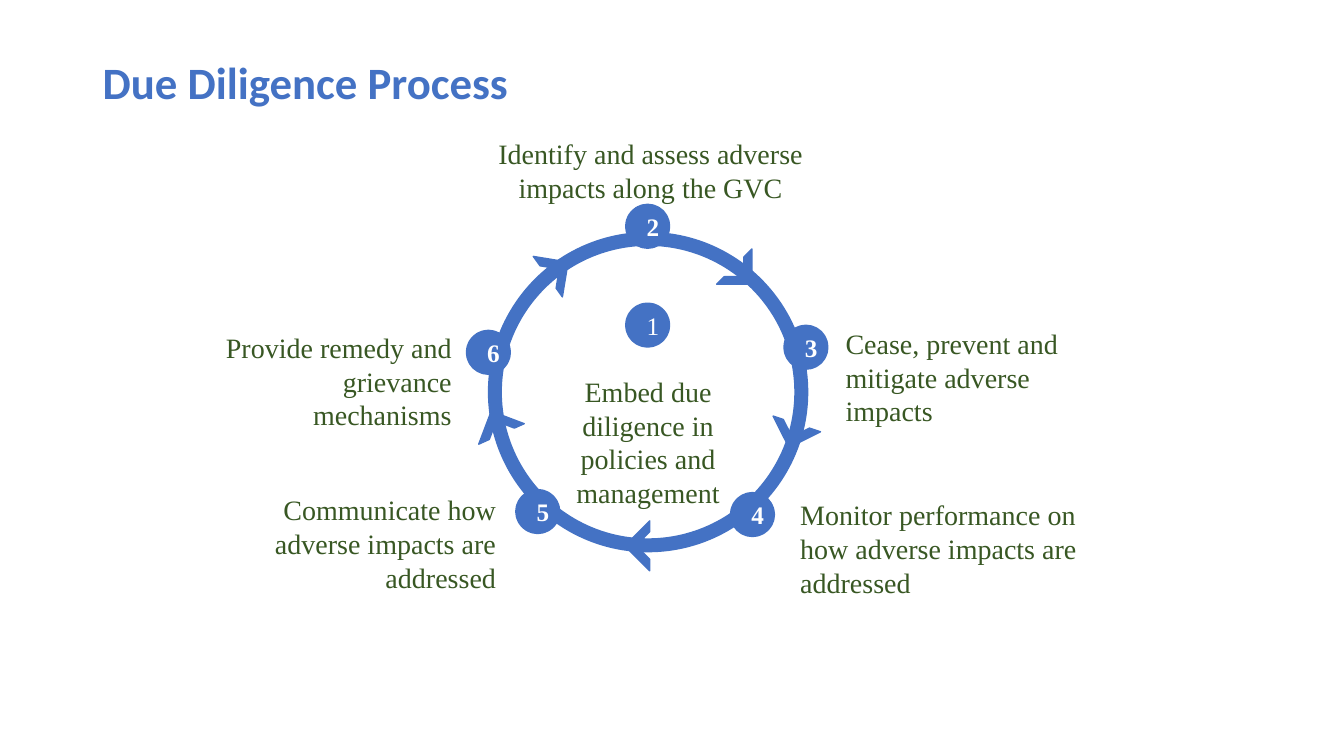
from pptx import Presentation
from pptx.dml.color import RGBColor
from pptx.enum.shapes import MSO_SHAPE
from pptx.enum.text import MSO_ANCHOR, MSO_AUTO_SIZE, PP_ALIGN
from pptx.util import Emu, Pt

COLS, ROWS = 160, 90
UNIT = 76200  # one grid square, a twelfth of an inch

HUES = {"blue": "4472C4", "green": "385723", "white": "FFFFFF"}
SERIF = "Times New Roman"
FONTS = {
    "title": {"name": "Calibri", "size": Pt(32), "bold": True, "hue": "blue"},
    "label": {"name": SERIF, "size": Pt(20), "bold": False, "hue": "green"},
    "step": {"name": SERIF, "size": Pt(18), "bold": True, "hue": "white"},
    "core": {"name": SERIF, "size": Pt(18), "bold": False, "hue": "white"},
}
LEFT, MID, RIGHT = PP_ALIGN.LEFT, PP_ALIGN.CENTER, PP_ALIGN.RIGHT


class Board:
    """Holds the style and the current slide; lengths are grid squares."""

    def __init__(self):
        self.deck = Presentation()
        self.deck.slide_width = Emu(COLS * UNIT)
        self.deck.slide_height = Emu(ROWS * UNIT)
        self.slide = self.deck.slides.add_slide(self.deck.slide_layouts[6])

    def grid(self, *spans):
        return [Emu(round(span * UNIT)) for span in spans]

    def hue(self, name):
        return RGBColor.from_string(HUES[name])

    def put_text(self, shape, text, font, align, frame):
        body = shape.text_frame
        for key, value in {"word_wrap": True, **frame}.items():
            setattr(body, key, value)
        para = body.paragraphs[0]
        para.alignment = align
        run = para.add_run()
        run.text = text
        for key, value in FONTS[font].items():
            if key == "hue":
                run.font.color.rgb = self.hue(value)
            else:
                setattr(run.font, key, value)
        return para

    def label(self, box, text, font="label", align=LEFT, **frame):
        shape = self.slide.shapes.add_textbox(*self.grid(*box))
        return self.put_text(shape, text, font, align, frame)

    def shape(self, kind, mid, size, fill="blue", line=10):
        x, y = mid
        box = self.grid(x - size / 2, y - size / 2, size, size)
        shape = self.slide.shapes.add_shape(kind, *box)
        shape.shadow.inherit = False
        shape.fill.solid()
        shape.fill.fore_color.rgb = self.hue(fill)
        shape.line.color.rgb = self.hue("blue")
        shape.line.width = Pt(line)
        return shape

    def ring(self, mid, size, text):
        shape = self.shape(MSO_SHAPE.OVAL, mid, size, "white")
        top, low = self.grid(10.8, 0)
        self.put_text(shape, text, "label", MID, {
            "vertical_anchor": MSO_ANCHOR.TOP,
            "margin_top": top, "margin_bottom": low})

    def arrow(self, mid, turn):
        shape = self.shape(MSO_SHAPE.HALF_FRAME, mid, 4.2, line=1)
        shape.rotation = turn
        shape.adjustments[0] = 0.215
        shape.adjustments[1] = 0.232

    def badge(self, mid, text, font):
        shape = self.shape(MSO_SHAPE.OVAL, mid, 3.72)
        self.put_text(shape, text, font, MID,
                      {"vertical_anchor": MSO_ANCHOR.MIDDLE})


def main():
    board = Board()

    # Ring with the core step
    board.ring((77.16, 46.68), 36.48,
               "Embed due diligence in policies and management")

    # Step labels around the ring
    labels = [
        ((57, 15.72, 40.92, 9.24), MID,
         "Identify and assess adverse impacts along the GVC"),
        ((99.48, 38.28, 32.4, 13.32), LEFT,
         "Cease, prevent and mitigate adverse impacts"),
        ((94.08, 58.68, 40.8, 13.32), LEFT,
         "Monitor performance on how adverse impacts are addressed"),
        ((23.76, 58.08, 36.48, 13.32), RIGHT,
         "Communicate how adverse impacts are addressed"),
        ((22.32, 38.76, 32.64, 9.24), RIGHT,
         "Provide remedy and grievance mechanisms"),
    ]
    for box, align, text in labels:
        board.label(box, text, align=align,
                    auto_size=MSO_AUTO_SIZE.SHAPE_TO_FIT_TEXT)

    # Arrowheads, clockwise from the upper right
    arrows = [
        ((87.42, 31.74), 180),
        ((94.86, 50.46), 243.3),
        ((77.34, 64.98), 315.1),
        ((59.7, 51.66), 20.7),
        ((65.22, 32.94), 99.3),
    ]
    for mid, turn in arrows:
        board.arrow(mid, turn)

    # Numbered badges: the core step, then clockwise from the top
    mids = [(77.1, 38.7), (77.1, 26.94), (95.94, 41.34),
            (89.58, 61.26), (64.02, 60.9), (58.14, 41.94)]
    for step, mid in enumerate(mids, 1):
        board.badge(mid, str(step), "core" if step == 1 else "step")

    # Title
    title = board.label((11.04, 4.8, 98.76, 8.76), "Due Diligence Process",
                        "title", vertical_anchor=MSO_ANCHOR.BOTTOM)
    title.line_spacing = 0.9

    board.deck.save("out.pptx")


if __name__ == "__main__":
    main()
